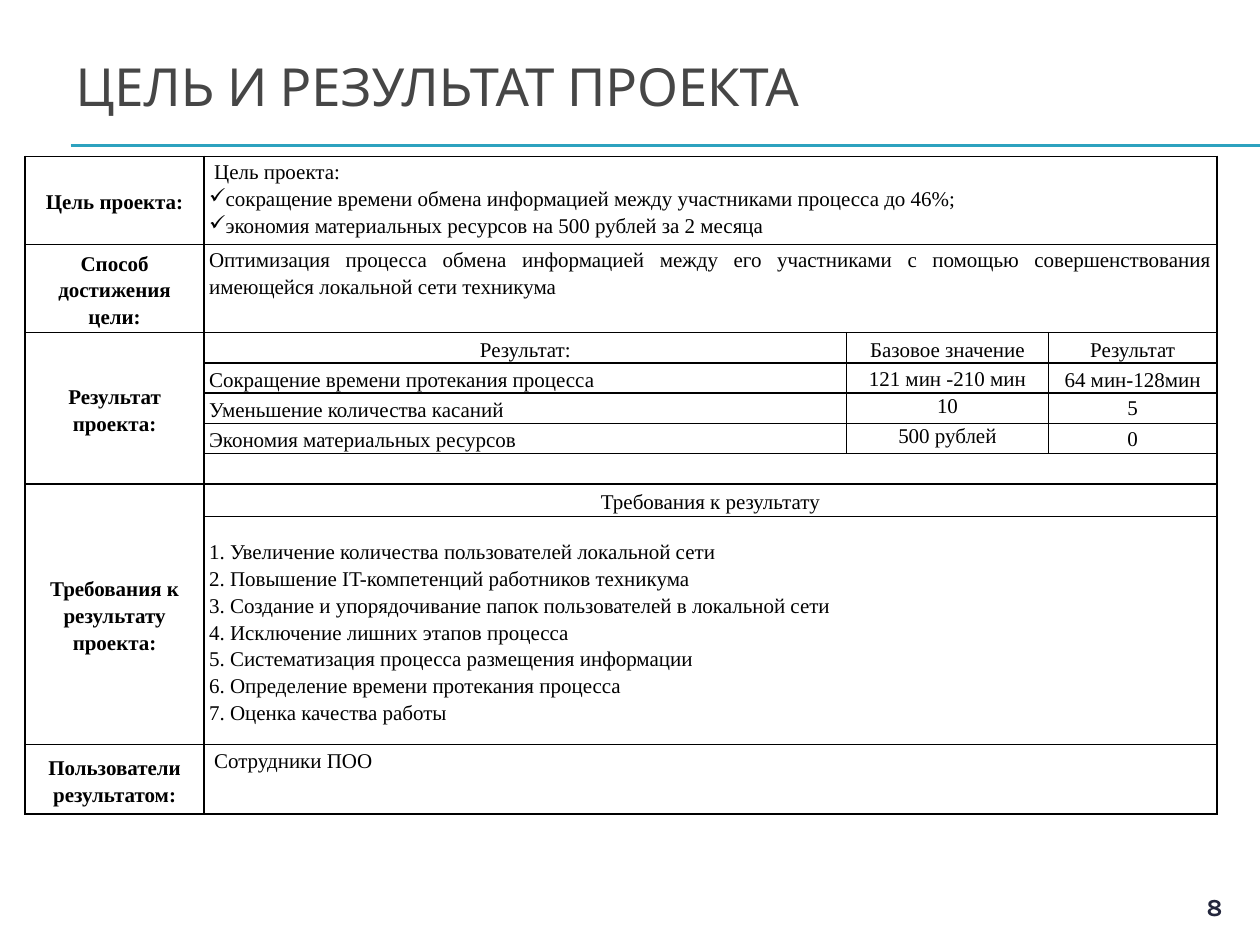
import pptx
import pptx.util
import pptx.dml.color
import pptx.enum.text
import pptx.enum.shapes
import pptx.oxml.ns
import lxml.etree

Inches, Pt = pptx.util.Inches, pptx.util.Pt
ALIGN = pptx.enum.text.PP_ALIGN
ANCHOR = pptx.enum.text.MSO_ANCHOR
qn = pptx.oxml.ns.qn

THEME = {
    "title_font": "Karla", "body_font": "Times New Roman",
    "title": "464646", "number": "23263C", "text": "000000",
    "rule": "2DA2BF", "border": "000000", "fill": "FFFFFF",
    "title_size": 30, "body_size": 12, "number_size": 14,
    "spacing": 1.15, "line": 0.75, "border_width": 1,
}

TITLE = "ЦЕЛЬ И РЕЗУЛЬТАТ ПРОЕКТА"
PAGE = "8"
COLS = [1.42, 5.1, 1.6, 1.34]
ROWS = [0.7, 0.7, 0.24, 0.24, 0.24, 0.24, 0.24, 0.26, 1.81, 0.55]

LABELS = [
    (0, 1, "Цель проекта:"),
    (1, 1, "Способ достижения цели:"),
    (2, 5, "Результат проекта:"),
    (7, 2, "Требования к результату проекта:"),
    (9, 1, "Пользователи результатом:"),
]
GOAL = "Цель проекта:"
GOAL_ITEMS = [
    "сокращение времени обмена информацией между участниками процесса до 46%;",
    "экономия материальных ресурсов на 500 рублей за 2 месяца",
]
METHOD = ("Оптимизация процесса обмена информацией между его участниками "
          "с помощью совершенствования имеющейся локальной сети техникума")
RESULTS = [
    ("Результат:", "Базовое значение", "Результат"),
    ("Сокращение времени протекания процесса", "121 мин -210 мин", "64 мин-128мин"),
    ("Уменьшение количества касаний", "10", "5"),
    ("Экономия материальных ресурсов", "500 рублей", "0"),
]
REQUIREMENTS_HEAD = "Требования к результату"
REQUIREMENTS = [
    "1. Увеличение количества пользователей локальной сети",
    "2. Повышение IT-компетенций работников техникума",
    "3. Создание и упорядочивание папок пользователей в локальной сети",
    "4. Исключение лишних этапов процесса",
    "5. Систематизация процесса размещения информации",
    "6. Определение времени протекания процесса",
    "7. Оценка качества работы",
]
USERS = "Сотрудники ПОО"


def rgb(value):
    return pptx.dml.color.RGBColor.from_string(value)


def write(tf, text, first=True, size=THEME["body_size"], font=THEME["body_font"],
          color=THEME["text"], bold=False, align=ALIGN.LEFT, spacing=None,
          indent=0, bullet=None):
    p = tf.paragraphs[0] if first else tf.add_paragraph()
    p.alignment = align
    if spacing:
        p.line_spacing = spacing
    pPr = p._p.get_or_add_pPr()
    pPr.set("marL", "0")
    pPr.set("indent", str(Inches(indent)))
    if bullet:
        lxml.etree.SubElement(pPr, qn("a:buChar")).set("char", bullet)
    r = p.add_run()
    r.text = text
    r.font.size, r.font.name, r.font.bold = Pt(size), font, bold
    r.font.color.rgb = rgb(color)


def style_cell(cell):
    cell.margin_left = cell.margin_right = Inches(0.04)
    cell.margin_top, cell.margin_bottom = Inches(0.01), 0
    tcPr = cell._tc.get_or_add_tcPr()
    for side in ("lnL", "lnR", "lnT", "lnB"):
        ln = lxml.etree.SubElement(tcPr, qn("a:" + side))
        ln.set("w", str(Pt(THEME["border_width"])))
        fill = lxml.etree.SubElement(ln, qn("a:solidFill"))
        lxml.etree.SubElement(fill, qn("a:srgbClr")).set("val", THEME["border"])
    cell.fill.solid()
    cell.fill.fore_color.rgb = rgb(THEME["fill"])
    end = lxml.etree.SubElement(cell.text_frame.paragraphs[0]._p, qn("a:endParaRPr"))
    end.set("sz", str(THEME["body_size"] * 100))


def fill_cell(cell, lines, anchor=ANCHOR.MIDDLE, spacing=THEME["spacing"], **fmt):
    cell.vertical_anchor = anchor
    for i, line in enumerate(lines):
        write(cell.text_frame, line, first=i == 0, spacing=spacing, **fmt)


def add_rules(s):
    for y in (1.15, 1.16):
        line = s.shapes.add_connector(pptx.enum.shapes.MSO_CONNECTOR.STRAIGHT,
                                      Inches(0.56), Inches(y), Inches(10), Inches(y))
        line.line.color.rgb = rgb(THEME["rule"])
        line.line.width = Pt(THEME["line"])
        lxml.etree.SubElement(line._element.spPr, qn("a:effectLst"))


def add_project_table(s):
    frame = s.shapes.add_table(len(ROWS), len(COLS), Inches(0.2), Inches(1.24),
                               Inches(sum(COLS)), Inches(sum(ROWS)))
    table = frame.table
    for col, width in zip(table.columns, COLS):
        col.width = Inches(width)
    for row, height in zip(table.rows, ROWS):
        row.height = Inches(height)
    for cell in table.iter_cells():
        style_cell(cell)
    for row in (0, 1, 6, 7, 8, 9):
        table.cell(row, 1).merge(table.cell(row, 3))
    for row, span, label in LABELS:
        if span > 1:
            table.cell(row, 0).merge(table.cell(row + span - 1, 0))
        fill_cell(table.cell(row, 0), [label], bold=True, align=ALIGN.CENTER)

    top = {"anchor": ANCHOR.TOP, "align": ALIGN.JUSTIFY}
    goal = table.cell(0, 1)
    fill_cell(goal, [GOAL], indent=0.04, **top)
    for item in GOAL_ITEMS:
        write(goal.text_frame, item, first=False, align=ALIGN.JUSTIFY,
              spacing=THEME["spacing"], bullet="✓")
    fill_cell(table.cell(1, 1), [METHOD], **top)
    for i, values in enumerate(RESULTS):
        for j, value in enumerate(values):
            fill_cell(table.cell(2 + i, 1 + j), [value],
                      anchor=ANCHOR.TOP if i and j == 1 else ANCHOR.MIDDLE,
                      align=ALIGN.LEFT if i and j == 0 else ALIGN.CENTER,
                      spacing=None if i > 1 and j else THEME["spacing"])
    fill_cell(table.cell(7, 1), [REQUIREMENTS_HEAD], align=ALIGN.CENTER)
    fill_cell(table.cell(8, 1), REQUIREMENTS, align=ALIGN.JUSTIFY)
    fill_cell(table.cell(9, 1), [USERS], indent=0.04, **top)


def main():
    prs = pptx.Presentation()
    prs.slide_width, prs.slide_height = Inches(10), Inches(7.5)
    s = prs.slides.add_slide(prs.slide_layouts[5])
    add_rules(s)

    title = s.shapes.title
    title.left, title.top = Inches(0.5), Inches(0.21)
    title.width, title.height = Inches(9.5), Inches(0.94)
    title.text_frame.vertical_anchor = ANCHOR.MIDDLE
    write(title.text_frame, TITLE, size=THEME["title_size"],
          font=THEME["title_font"], color=THEME["title"])

    number = s.shapes.add_textbox(Inches(9.45), Inches(7.03), Inches(0.38), Inches(0.31))
    number.text_frame.word_wrap = True
    write(number.text_frame, PAGE, size=THEME["number_size"], font=THEME["title_font"],
          color=THEME["number"], bold=True, align=ALIGN.CENTER)

    add_project_table(s)
    prs.save("out.pptx")


if __name__ == "__main__":
    main()
